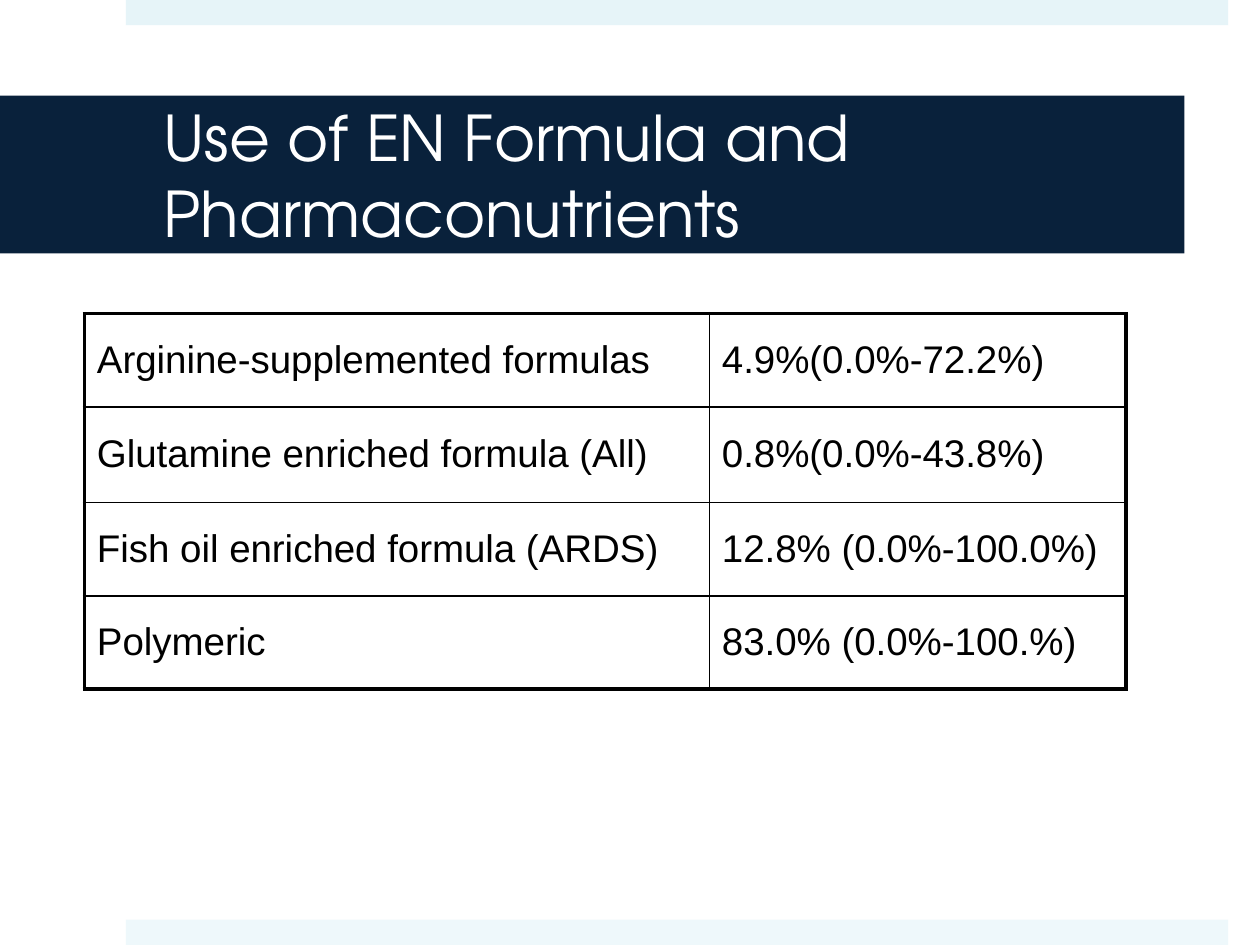
import pptx
import pptx.util
import pptx.dml.color
import pptx.enum.shapes
import pptx.enum.text
import pptx.oxml
import pptx.oxml.ns

Cm = pptx.util.Cm
TITLE = "Use of EN Formula and Pharmaconutrients"
ROWS = [
    ("Arginine-supplemented formulas", "4.9%(0.0%-72.2%)"),
    ("Glutamine enriched formula (All)", "0.8%(0.0%-43.8%)"),
    ("Fish oil enriched formula (ARDS)", "12.8% (0.0%-100.0%)"),
    ("Polymeric", "83.0% (0.0%-100.%)"),
]
WIDTHS = [12.6, 8.4]
HEIGHTS = [1.88, 1.93, 1.88, 1.88]
BARS = [(0, "E6F4F8"), (18.54, "EEF8FB")]
THICK, THIN = 2.25, 1


def color(code):
    return pptx.dml.color.RGBColor.from_string(code)


def write(frame, text, size, font, ink):
    frame.word_wrap = True
    para = frame.paragraphs[0]
    para.alignment = pptx.enum.text.PP_ALIGN.LEFT
    run = para.add_run()
    run.text = text
    run.font.size = pptx.util.Pt(size)
    run.font.name = font
    run.font.color.rgb = color(ink)


def block(slide, left, top, width, height, fill):
    shape = slide.shapes.add_shape(
        pptx.enum.shapes.MSO_SHAPE.RECTANGLE,
        Cm(left), Cm(top), Cm(width), Cm(height))
    shape.shadow.inherit = False
    shape.fill.solid()
    shape.fill.fore_color.rgb = color(fill)
    shape.line.fill.background()
    return shape


def border(cell, side, weight):
    space = pptx.oxml.ns.nsdecls("a")
    width = pptx.util.Pt(weight)
    cell._tc.get_or_add_tcPr().append(pptx.oxml.parse_xml(
        f'<a:ln{side} {space} w="{width}"><a:solidFill>'
        f'<a:srgbClr val="000000"/></a:solidFill></a:ln{side}>'))


def title(slide):
    band = block(slide, 0, 1.93, 23.88, 3.18, "09213B")
    frame = band.text_frame
    frame.margin_left, frame.margin_right = Cm(3.3), Cm(0.76)
    frame.margin_top = frame.margin_bottom = Cm(0.13)
    frame.vertical_anchor = pptx.enum.text.MSO_ANCHOR.MIDDLE
    write(frame, TITLE, size=36, font="TeX Gyre Adventor", ink="FFFFFF")


def grid(slide):
    table = slide.shapes.add_table(
        len(ROWS), len(WIDTHS), Cm(1.7), Cm(6.32),
        Cm(sum(WIDTHS)), Cm(sum(HEIGHTS))).table
    table.first_row = table.horz_banding = False
    for col, width in zip(table.columns, WIDTHS):
        col.width = Cm(width)
    for row, height in zip(table.rows, HEIGHTS):
        row.height = Cm(height)
    for r, texts in enumerate(ROWS):
        for c, text in enumerate(texts):
            cell = table.cell(r, c)
            edges = {"L": c == 0, "R": c == len(WIDTHS) - 1,
                     "T": r == 0, "B": r == len(ROWS) - 1}
            for side, outer in edges.items():
                border(cell, side, THICK if outer else THIN)
            cell.fill.solid()
            cell.fill.fore_color.rgb = color("FFFFFF")
            cell.vertical_anchor = pptx.enum.text.MSO_ANCHOR.MIDDLE
            write(cell.text_frame, text, size=22, font="Arial", ink="000000")


def main():
    deck = pptx.Presentation()
    deck.slide_width, deck.slide_height = Cm(25.4), Cm(19.05)
    slide = deck.slides.add_slide(deck.slide_layouts[6])
    for top, fill in BARS:
        block(slide, 2.54, top, 22.22, 0.51, fill)
    title(slide)
    grid(slide)
    deck.save("out.pptx")


if __name__ == "__main__":
    main()
